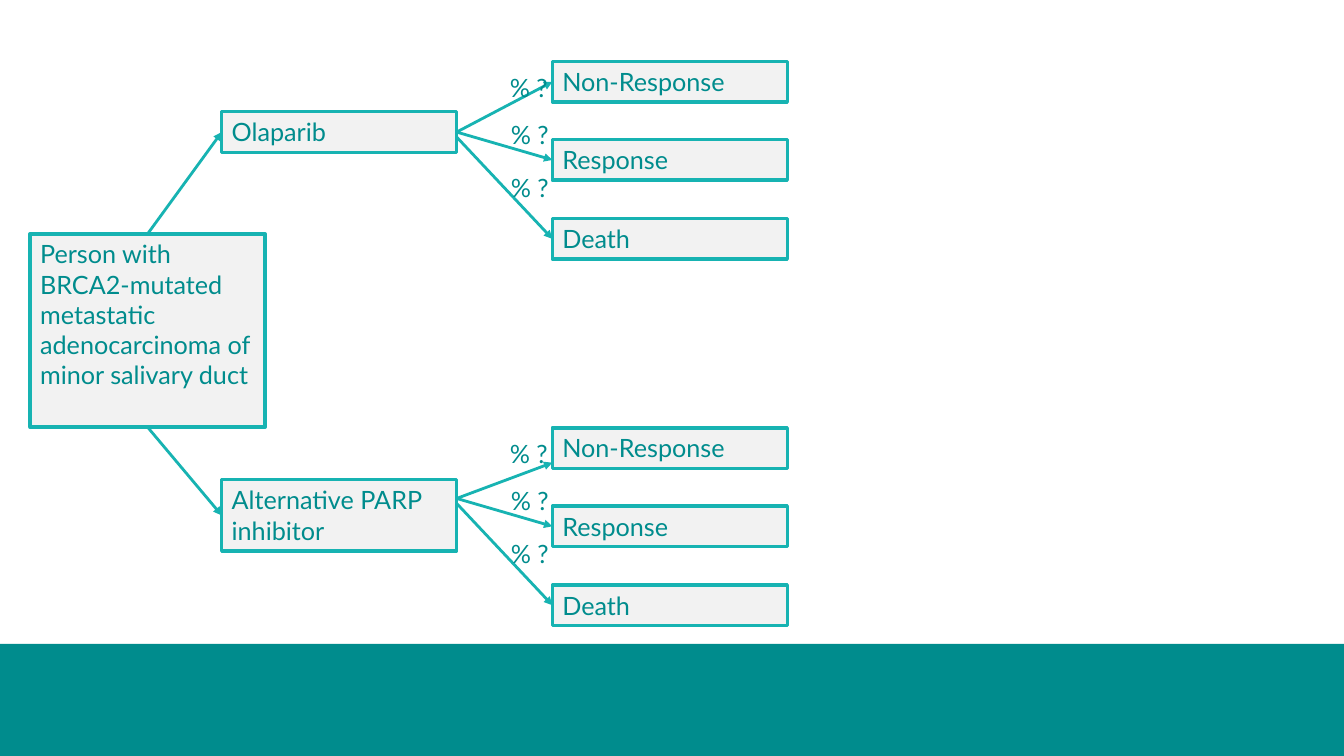
from pptx import Presentation
from pptx.dml.color import RGBColor
from pptx.enum.shapes import MSO_CONNECTOR, MSO_SHAPE
from pptx.enum.text import MSO_ANCHOR, MSO_AUTO_SIZE, PP_ALIGN
from pptx.oxml.ns import qn
from pptx.util import Pt
from lxml.etree import SubElement

TEAL = RGBColor(0x00, 0x8C, 0x8D)
AQUA = RGBColor(0x17, 0xB3, 0xB2)
GREY = RGBColor(0xF2, 0xF2, 0xF2)
TOP, LEFT, BOTTOM, RIGHT = range(4)
WIDE, HIGH = 167.8, 29.08


class Sketch:
    font = {"name": "Lato", "size": Pt(18)}
    frame = {
        "word_wrap": True,
        "auto_size": MSO_AUTO_SIZE.NONE,
        "vertical_anchor": MSO_ANCHOR.TOP,
    }

    def __init__(self, slide):
        self.shapes = slide.shapes

    def apply(self, item, style):
        for name, value in style.items():
            setattr(item, name, value)

    def letter(self, shape, text):
        frame = shape.text_frame
        self.apply(frame, self.frame)
        line = frame.paragraphs[0]
        line.text = text
        line.alignment = PP_ALIGN.LEFT
        self.apply(line.font, self.font)
        line.font.color.rgb = TEAL

    def block(self, x, y, w, h, fill):
        shape = self.shapes.add_shape(MSO_SHAPE.RECTANGLE, Pt(x), Pt(y), Pt(w), Pt(h))
        shape.shadow.inherit = False
        shape.fill.solid()
        shape.fill.fore_color.rgb = fill
        shape.line.fill.background()
        return shape

    def box(self, text, x, y, h=HIGH):
        shape = self.block(x, y, WIDE, h, GREY)
        shape.line.color.rgb = AQUA
        shape.line.width = Pt(2.5)
        self.letter(shape, text)
        return shape

    def label(self, text, x, y):
        self.letter(self.shapes.add_textbox(Pt(x), Pt(y), Pt(52.5), Pt(HIGH)), text)

    def arrow(self, start, end, tail=None, head=None):
        x1, y1, x2, y2 = (Pt(v) for v in (*start, *end))
        link = self.shapes.add_connector(MSO_CONNECTOR.STRAIGHT, x1, y1, x2, y2)
        if tail:
            link.begin_connect(*tail)
        if head:
            link.end_connect(*head)
        link.line.color.rgb = AQUA
        link.line.width = Pt(2)
        look = link.element.spPr
        SubElement(look.find(qn("a:ln")), qn("a:tailEnd"), type="triangle")
        SubElement(look, qn("a:effectLst"))


def main():
    deck = Presentation()
    deck.slide_width, deck.slide_height = Pt(960), Pt(540)
    sketch = Sketch(deck.slides.add_slide(deck.slide_layouts[6]))
    sketch.block(0, 460, 960, 80, TEAL)

    person = sketch.box(
        "Person with BRCA2-mutated metastatic adenocarcinoma of minor salivary duct",
        21.6, 167, 138.2)
    drug = sketch.box("Olaparib", 158.4, 79.8)
    other = sketch.box("Alternative PARP inhibitor", 158.4, 342.6, 51.1)
    sketch.arrow((105.5, 167), (158.4, 94.34), (person, TOP), (drug, LEFT))
    sketch.arrow((105.5, 305.2), (158.4, 368.15), (person, BOTTOM), (other, LEFT))

    results = [
        ("Non-Response", 43.9, 94.34, 357.1, 48.2),
        ("Response", 99.7, 94.34, 357.8, 81.4),
        ("Death", 156.1, 97.9, 357.8, 119.5),
    ]
    for down in (0, 261.7):
        for name, top, start, left, mark in results:
            goal = sketch.box(name, 394.6, top + down)
            tail = (drug, RIGHT) if not down and name != "Death" else None
            low = down and name == "Non-Response"
            end = 330.5 if low else top + down + HIGH / 2
            head = None if low else (goal, LEFT)
            sketch.arrow((326.2, start + down), (394.6, end), tail, head)
            sketch.label("% ?", left, mark + down)

    deck.save("out.pptx")


if __name__ == "__main__":
    main()
